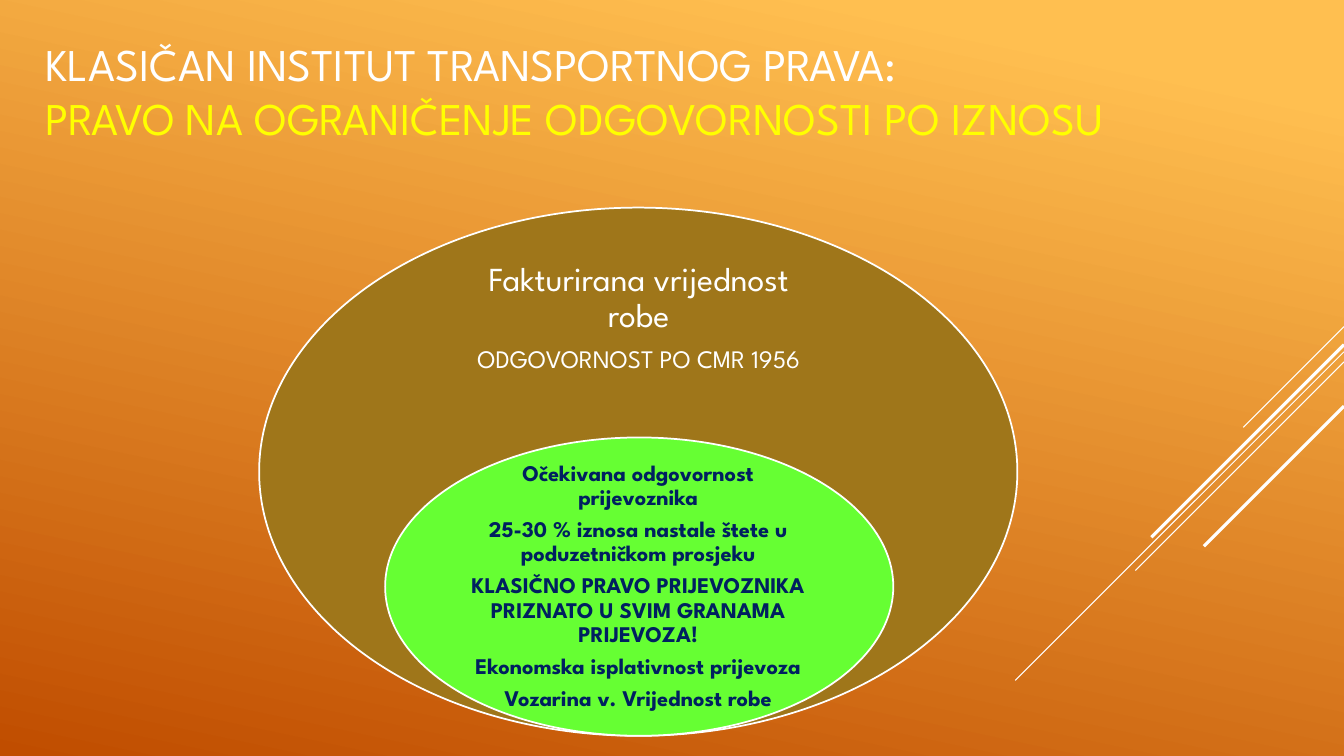
"""Build the slide on limiting a carrier's liability by amount."""
from dataclasses import dataclass

from lxml import etree
from pptx import Presentation
from pptx.dml.color import RGBColor
from pptx.enum.shapes import MSO_CONNECTOR, MSO_SHAPE
from pptx.enum.text import MSO_ANCHOR, MSO_AUTO_SIZE, PP_ALIGN
from pptx.oxml.ns import qn
from pptx.util import Inches, Pt

OVAL = MSO_SHAPE.OVAL
LINE = MSO_CONNECTOR.STRAIGHT
MIDDLE = MSO_ANCHOR.MIDDLE
FIXED = MSO_AUTO_SIZE.NONE
LEFT, CENTER = PP_ALIGN.LEFT, PP_ALIGN.CENTER


@dataclass(frozen=True)
class Theme:
    """Hold the colours, font and type sizes."""
    font: str = "League Spartan"
    white: RGBColor = RGBColor(0xFF, 0xFF, 0xFF)
    yellow: RGBColor = RGBColor(0xFF, 0xFF, 0x00)
    navy: RGBColor = RGBColor(0x00, 0x20, 0x60)
    brown: RGBColor = RGBColor(0x9F, 0x76, 0x1A)
    green: RGBColor = RGBColor(0x66, 0xFF, 0x33)
    light: RGBColor = RGBColor(0xFF, 0xBF, 0x50)
    dark: RGBColor = RGBColor(0xC0, 0x4D, 0x00)
    title: float = 32.4
    head: int = 24
    sub: int = 18
    body: int = 16


THEME = Theme()


def put(item, **values):
    """Set attributes from format values."""
    for name, value in values.items():
        setattr(item, name, value)


def write(para, text, size, color, bold=False):
    """Add one formatted run."""
    run = para.add_run()
    run.text = text
    put(run.font, name=THEME.font, size=Pt(size), bold=bold)
    run.font.color.rgb = color


deck = Presentation()
put(deck, slide_width=Inches(13.33), slide_height=Inches(7.5))
slide = deck.slides.add_slide(deck.slide_layouts[5])
shapes = slide.shapes

back = slide.background.fill
back.gradient()
back.gradient_angle = 258
stops = ((0.1, THEME.light), (1, THEME.dark))
for stop, (place, color) in zip(back.gradient_stops, stops):
    stop.position = place
    stop.color.rgb = color

edge = 13.33
rays = ((3.24, 1, 0.75), (3.49, 3.26, 0.75), (3.59, 2.07, 0.75),
        (3.42, 1.91, 2.25), (4.03, 1.39, 2.25))
for top, span, width in rays:
    ray = shapes.add_connector(LINE, Inches(edge), Inches(top),
                               Inches(edge - span), Inches(top + span))
    ray.line.width = Pt(width)
    ray.line.color.rgb = THEME.white
    etree.SubElement(ray.line._get_or_add_ln().getparent(), qn("a:effectLst"))

title = shapes.title
put(title, left=Inches(0.35), top=Inches(0.13),
    width=Inches(12.4), height=Inches(1.53))
put(title.text_frame, word_wrap=True, auto_size=FIXED, vertical_anchor=MIDDLE)
para = title.text_frame.paragraphs[0]
para.alignment = LEFT
write(para, "KLASIČAN INSTITUT TRANSPORTNOG PRAVA:", THEME.title, THEME.white)
para.add_line_break()
write(para, "PRAVO NA OGRANIČENJE ODGOVORNOSTI PO IZNOSU",
      THEME.title, THEME.yellow)

value = (("Fakturirana vrijednost robe", THEME.head),
         ("ODGOVORNOST PO CMR 1956", THEME.sub))
duty = [(text, THEME.body) for text in (
    "Očekivana odgovornost prijevoznika",
    "25-30 % iznosa nastale štete u poduzetničkom prosjeku",
    "KLASIČNO PRAVO PRIJEVOZNIKA PRIZNATO U SVIM GRANAMA PRIJEVOZA!",
    "Ekonomska isplativnost prijevoza",
    "Vozarina v. Vrijednost robe")]
rings = (
    ((2.57, 2.06, 7.52, 5.24), THEME.brown, (4.36, 2.45, 3.95, 1.41),
     0.19, value, THEME.white, False),
    ((3.82, 4.34, 5.04, 2.96), THEME.green, (4.55, 4.54, 3.56, 2.56),
     0.12, duty, THEME.navy, True))
for oval, fill, area, inset, lines, ink, bold in rings:
    ring = shapes.add_shape(OVAL, *map(Inches, oval))
    ring.shadow.inherit = False
    ring.fill.solid()
    ring.fill.fore_color.rgb = fill
    ring.line.color.rgb = THEME.white
    ring.line.width = Pt(1.25)
    frame = shapes.add_textbox(*map(Inches, area)).text_frame
    put(frame, word_wrap=True, auto_size=FIXED, vertical_anchor=MIDDLE)
    for side in ("left", "right", "top", "bottom"):
        setattr(frame, f"margin_{side}", Inches(inset))
    for row, (text, size) in enumerate(lines):
        para = frame.add_paragraph() if row else frame.paragraphs[0]
        put(para, alignment=CENTER, line_spacing=0.9,
            space_after=Pt(0.35 * size))
        write(para, text, size, ink, bold)

deck.save("out.pptx")
